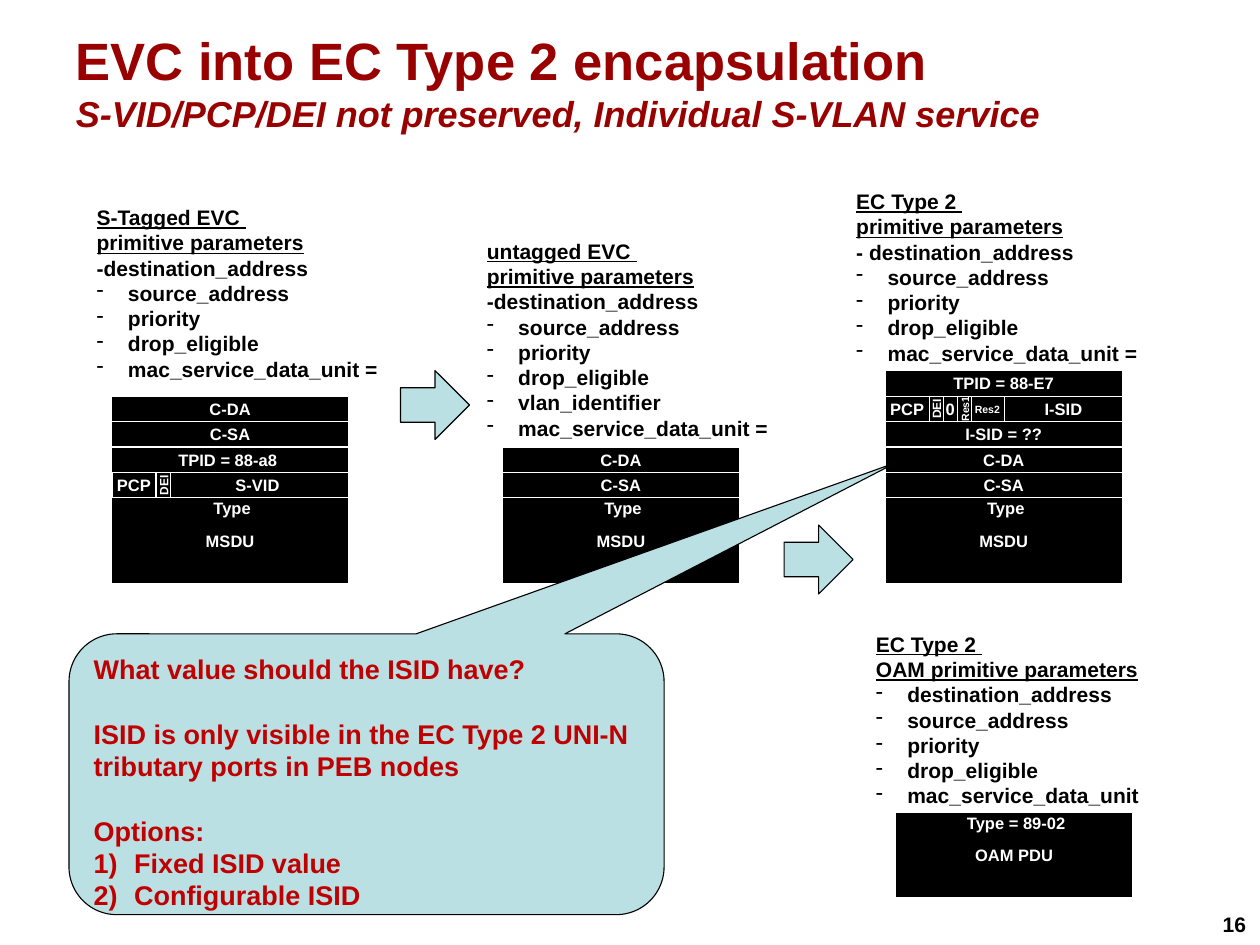
import pptx
import pptx.dml.color
import pptx.enum.shapes
import pptx.enum.text
import pptx.oxml
import pptx.oxml.ns
import pptx.util

Pt = pptx.util.Pt
SHAPES = pptx.enum.shapes.MSO_SHAPE
ANCHOR = pptx.enum.text.MSO_ANCHOR
ALIGN = pptx.enum.text.PP_ALIGN
ROW_HEIGHT = 16.95
CELL_WIDTH = 158.4
BLOCK_HEIGHT = 56.9


def color(hex_value):
    return pptx.dml.color.RGBColor.from_string(hex_value)


def add_run(paragraph, text, size, hex_value):
    run = paragraph.add_run()
    run.text = text
    run.font.name = "Arial"
    run.font.size = Pt(size)
    run.font.bold = True
    run.font.color.rgb = color(hex_value)
    return run


presentation = pptx.Presentation()
presentation.slide_width = Pt(840)
presentation.slide_height = Pt(630)
slide = presentation.slides.add_slide(presentation.slide_layouts[6])

title = slide.shapes.add_textbox(Pt(42), Pt(14.4), Pt(756), Pt(80))
title.text_frame.word_wrap = True
title.text_frame.vertical_anchor = ANCHOR.MIDDLE
title.text_frame.margin_left = Pt(8.64)
for text, size, spacing in [
    ("EVC into EC Type 2 encapsulation", 35, 42),
    ("S-VID/PCP/DEI not preserved, Individual S-VLAN service", 24, 29),
]:
    paragraph = title.text_frame.paragraphs[0]
    if size == 24:
        paragraph = title.text_frame.add_paragraph()
    paragraph.line_spacing = Pt(spacing)
    add_run(paragraph, text, size, "990000").font.italic = size == 24

page_number = slide.shapes.add_textbox(Pt(808), Pt(604), Pt(31.5), Pt(24.5))
page_number.text_frame.word_wrap = False
add_run(page_number.text_frame.paragraphs[0], "16", 14, "000000")

addresses = [[("C-DA", 0, CELL_WIDTH, 11)], [("C-SA", 0, CELL_WIDTH, 11)]]
s_tag = [
    [("TPID = 88-a8 ", 0, CELL_WIDTH, 11)],
    [("S-VID ", 39.6, 118.8, 11), ("PCP", 0.7, 28.8, 11), ("DEI", 30.2, 9.4, 8)],
]
i_tag = [
    [("TPID = 88-E7", 0, CELL_WIDTH, 11)],
    [
        ("I-SID", 79.6, 78.8, 11),
        ("PCP", 0, 29.5, 11),
        ("DEI", 29.5, 9.4, 8),
        ("Res2", 56.9, 22.7, 7),
        ("0", 38.9, 9.4, 11),
        ("Res1", 48.6, 9.4, 7),
    ],
    [("I-SID = ??", 0, CELL_WIDTH, 11)],
]
frames = [
    (74.2, 331.9, addresses + s_tag, "Type", "MSDU"),
    (334.8, 331.9, addresses, "Type", "MSDU"),
    (590, 331.9, i_tag + addresses, "Type", "MSDU"),
    (596.9, 541.4, [], "Type = 89-02", "OAM PDU"),
]
for left, block_top, rows, type_text, payload in frames:
    cells = [
        (text, left + offset, block_top - ROW_HEIGHT * (len(rows) - index), width, ROW_HEIGHT, size)
        for index, row in enumerate(rows)
        for text, offset, width, size in row
    ]
    cells.append((payload, left, block_top, CELL_WIDTH, BLOCK_HEIGHT, 11))
    cells.append((type_text, left + 1.4, block_top - 1.4, CELL_WIDTH, ROW_HEIGHT, 11))
    for text, cell_left, top, width, height, size in cells:
        bounds = (Pt(cell_left), Pt(top), Pt(width), Pt(height))
        if text == type_text:
            cell = slide.shapes.add_textbox(*bounds)
        else:
            cell = slide.shapes.add_shape(SHAPES.RECTANGLE, *bounds)
            cell.shadow.inherit = False
            cell.fill.solid()
            cell.fill.fore_color.rgb = color("000000")
            cell.line.color.rgb = color("FFFFFF")
            cell.line.width = Pt(0.75)
        text_frame = cell.text_frame
        text_frame.word_wrap = False
        text_frame.vertical_anchor = ANCHOR.MIDDLE
        text_frame.margin_left = text_frame.margin_right = Pt(5)
        text_frame.margin_top = text_frame.margin_bottom = Pt(3)
        if text in ("DEI", "Res1"):
            text_frame._txBody.bodyPr.set("vert", "vert270")
        text_frame.paragraphs[0].alignment = ALIGN.CENTER
        add_run(text_frame.paragraphs[0], text, size, "FFFFFF")

common = ["source_address", "priority", "drop_eligible"]
data_unit = "mac_service_data_unit ="
parameter_lists = [
    (57.6, 132.8, 212, ["S-Tagged EVC ", "primitive parameters"],
     ["-destination_address"], common + [data_unit]),
    (317.8, 155.3, 212, ["untagged EVC ", "primitive parameters"],
     ["-destination_address"], common + ["vlan_identifier", data_unit]),
    (564, 122.2, 218, ["EC Type 2 ", "primitive parameters"],
     ["- destination_address"], common + [data_unit]),
    (577.2, 417.4, 205, ["EC Type 2 ", "OAM primitive parameters"],
     [], ["destination_address"] + common + ["mac_service_data_unit"]),
]
for left, top, width, headings, plain, bulleted in parameter_lists:
    lines = headings + plain + bulleted
    box = slide.shapes.add_textbox(Pt(left), Pt(top), Pt(width), Pt(7 + 16.85 * len(lines)))
    box.text_frame.word_wrap = True
    box.text_frame.margin_left = Pt(6.8)
    for index, text in enumerate(lines):
        paragraph = box.text_frame.paragraphs[0] if index == 0 else box.text_frame.add_paragraph()
        paragraph.line_spacing = Pt(16.85)
        run = add_run(paragraph, text, 14, "000000")
        run.font.underline = text in headings
        if text in bulleted:
            properties = paragraph._p.get_or_add_pPr()
            properties.set("marL", str(Pt(20.9)))
            properties.set("indent", str(-Pt(20.9)))
            bullet = pptx.oxml.parse_xml(f'<a:buChar {pptx.oxml.ns.nsdecls("a")} char="-"/>')
            properties.append(bullet)

arrow_1, arrow_2, callout = [
    slide.shapes.add_shape(kind, Pt(left), Pt(top), Pt(width), Pt(height))
    for kind, left, top, width, height in [
        (SHAPES.RIGHT_ARROW, 267, 247, 46, 46),
        (SHAPES.RIGHT_ARROW, 522.7, 350, 46, 46),
        (SHAPES.ROUNDED_RECTANGULAR_CALLOUT, 46, 422.6, 396.7, 187.2),
    ]
]
for shape in (arrow_1, arrow_2, callout):
    shape.shadow.inherit = False
    shape.fill.solid()
    shape.fill.fore_color.rgb = color("BBE0E3")
    shape.line.color.rgb = color("000000")
    shape.line.width = Pt(0.75)

for index, adjustment in enumerate([0.89, -1.11, 0.17]):
    callout.adjustments[index] = adjustment
callout.text_frame.word_wrap = True
callout.text_frame.vertical_anchor = ANCHOR.TOP
for index, (text, gap, numbered) in enumerate([
    ("What value should the ISID have?", 0, False),
    ("ISID is only visible in the EC Type 2 UNI-N tributary ports in PEB nodes", 21.5, False),
    ("Options:", 21.5, False),
    ("Fixed ISID value", 0, True),
    ("Configurable ISID", 0, True),
]):
    paragraph = callout.text_frame.paragraphs[0] if index == 0 else callout.text_frame.add_paragraph()
    paragraph.alignment = ALIGN.LEFT
    paragraph.line_spacing = Pt(21.5)
    paragraph.space_before = Pt(gap)
    add_run(paragraph, text, 18, "C00000")
    if numbered:
        properties = paragraph._p.get_or_add_pPr()
        properties.set("marL", str(Pt(27)))
        properties.set("indent", str(-Pt(27)))
        number = pptx.oxml.parse_xml(
            f'<a:buAutoNum {pptx.oxml.ns.nsdecls("a")} type="arabicParenR"/>')
        properties.append(number)

presentation.save("out.pptx")
